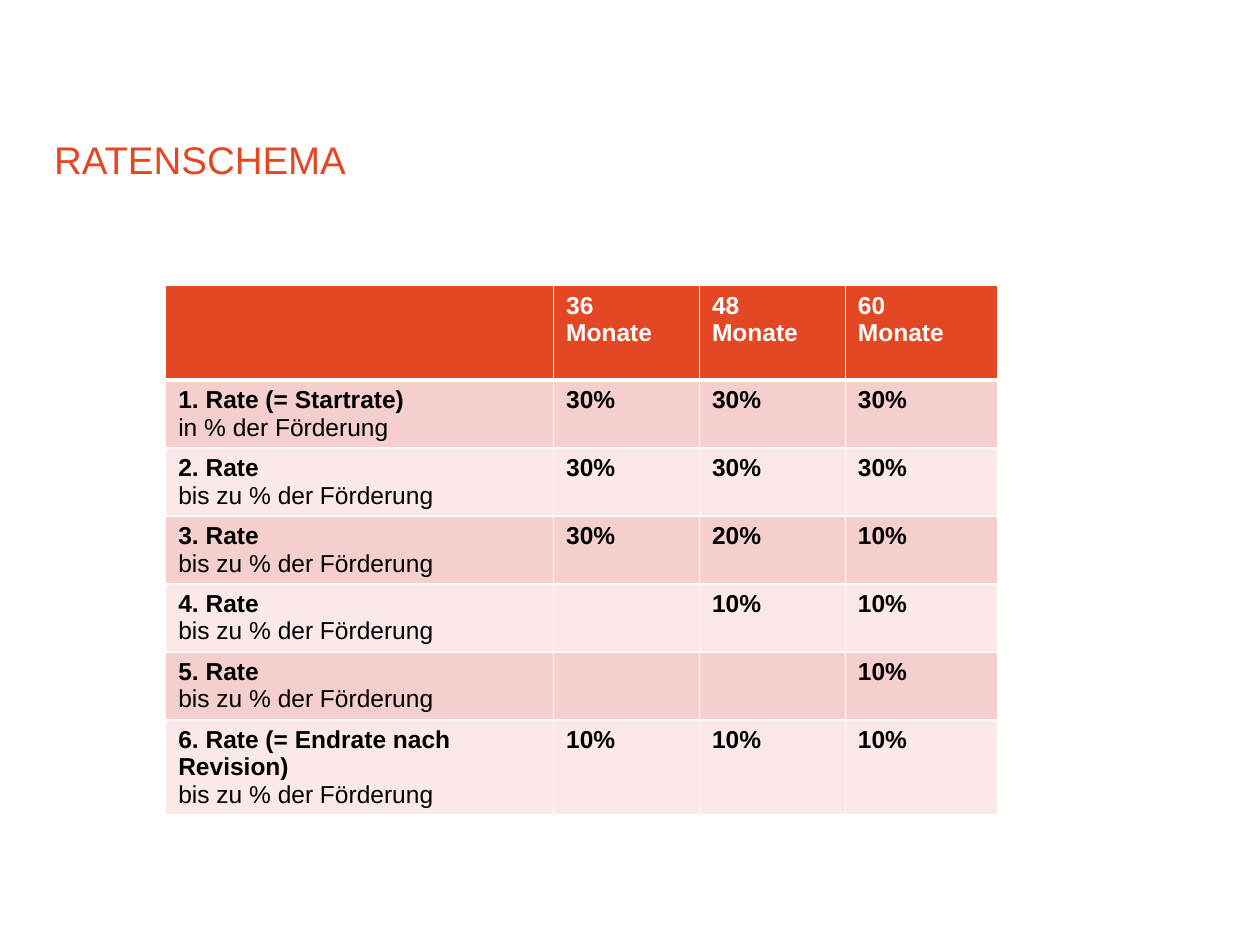
from lxml.etree import SubElement
from pptx import Presentation
from pptx.dml.color import RGBColor
from pptx.enum.text import MSO_ANCHOR, PP_ALIGN
from pptx.oxml.ns import qn
from pptx.util import Cm, Pt

RED = RGBColor(0xE3, 0x47, 0x23)
ROSE = RGBColor(0xF4, 0xCF, 0xCD)
PALE = RGBColor(0xFA, 0xE9, 0xE8)
WHITE = RGBColor(0xFF, 0xFF, 0xFF)
BLACK = RGBColor(0, 0, 0)

COL_WIDTHS = [7.82, 2.94, 2.94, 3.07]
ROW_HEIGHTS = [1.9] + [1.37] * 5 + [1.91]
TERMS = ["36", "48", "60"]
UP_TO = "bis zu % der Förderung"
RATES = [
    ("1. Rate (= Startrate)", "in % der Förderung", ["30%", "30%", "30%"]),
    ("2. Rate", UP_TO, ["30%", "30%", "30%"]),
    ("3. Rate", UP_TO, ["30%", "20%", "10%"]),
    ("4. Rate", UP_TO, ["", "10%", "10%"]),
    ("5. Rate", UP_TO, ["", "", "10%"]),
    ("6. Rate (= Endrate nach Revision)", UP_TO, ["10%", "10%", "10%"]),
]


def write(p, text, size=14, color=BLACK, bold=False):
    p.alignment = PP_ALIGN.LEFT
    p.font.size = Pt(size)
    if not text:
        return
    r = p.add_run()
    r.text = text
    r.font.name = "Arial"
    r.font.size = Pt(size)
    r.font.bold = bold
    r.font.color.rgb = color


def add_title(slide, text):
    sp = slide.shapes.title
    sp.left, sp.top, sp.width, sp.height = Cm(1.09), Cm(1.75), Cm(19.89), Cm(1.93)
    tf = sp.text_frame
    tf.margin_left = tf.margin_top = tf.margin_right = tf.margin_bottom = 0
    tf.vertical_anchor = MSO_ANCHOR.BOTTOM
    tf.word_wrap = True
    p = tf.paragraphs[0]
    p.line_spacing = Pt(24)
    write(p, text, size=22, color=RED)


def set_borders(cell, top=1, bottom=1):
    """Draw white borders; must run before the cell gets its fill."""
    tc_pr = cell._tc.get_or_add_tcPr()
    for side, width in (("L", 1), ("R", 1), ("T", top), ("B", bottom)):
        ln = SubElement(tc_pr, qn(f"a:ln{side}"), w=str(Pt(width)))
        fill = SubElement(ln, qn("a:solidFill"))
        SubElement(fill, qn("a:srgbClr"), val=str(WHITE))


def fill_cell(cell, lines, fill, color=BLACK, **borders):
    """Write (text, bold) lines, one paragraph each."""
    set_borders(cell, **borders)
    cell.fill.solid()
    cell.fill.fore_color.rgb = fill
    tf = cell.text_frame
    for i, (text, bold) in enumerate(lines):
        p = tf.add_paragraph() if i else tf.paragraphs[0]
        write(p, text, color=color, bold=bold)


def add_rate_table(slide):
    table = slide.shapes.add_table(
        len(ROW_HEIGHTS), len(COL_WIDTHS), Cm(3.34), Cm(5.76),
        Cm(sum(COL_WIDTHS)), Cm(sum(ROW_HEIGHTS))).table
    for column, width in zip(table.columns, COL_WIDTHS):
        column.width = Cm(width)
    for row, height in zip(table.rows, ROW_HEIGHTS):
        row.height = Cm(height)

    header = [[("", True)]] + [[(term, True), ("Monate", True)] for term in TERMS]
    for col, lines in enumerate(header):
        fill_cell(table.cell(0, col), lines, RED, WHITE, bottom=3)

    for row, (name, basis, shares) in enumerate(RATES, start=1):
        fill = ROSE if row % 2 else PALE
        cells = [[(name, True), (basis, False)]] + [[(s, True)] for s in shares]
        for col, lines in enumerate(cells):
            fill_cell(table.cell(row, col), lines, fill, top=3 if row == 1 else 1)


def main():
    prs = Presentation()
    prs.slide_width, prs.slide_height = Cm(25.4), Cm(19.05)
    slide = prs.slides.add_slide(prs.slide_layouts[5])
    add_title(slide, "RATENSCHEMA")
    add_rate_table(slide)
    prs.save("out.pptx")


if __name__ == "__main__":
    main()
